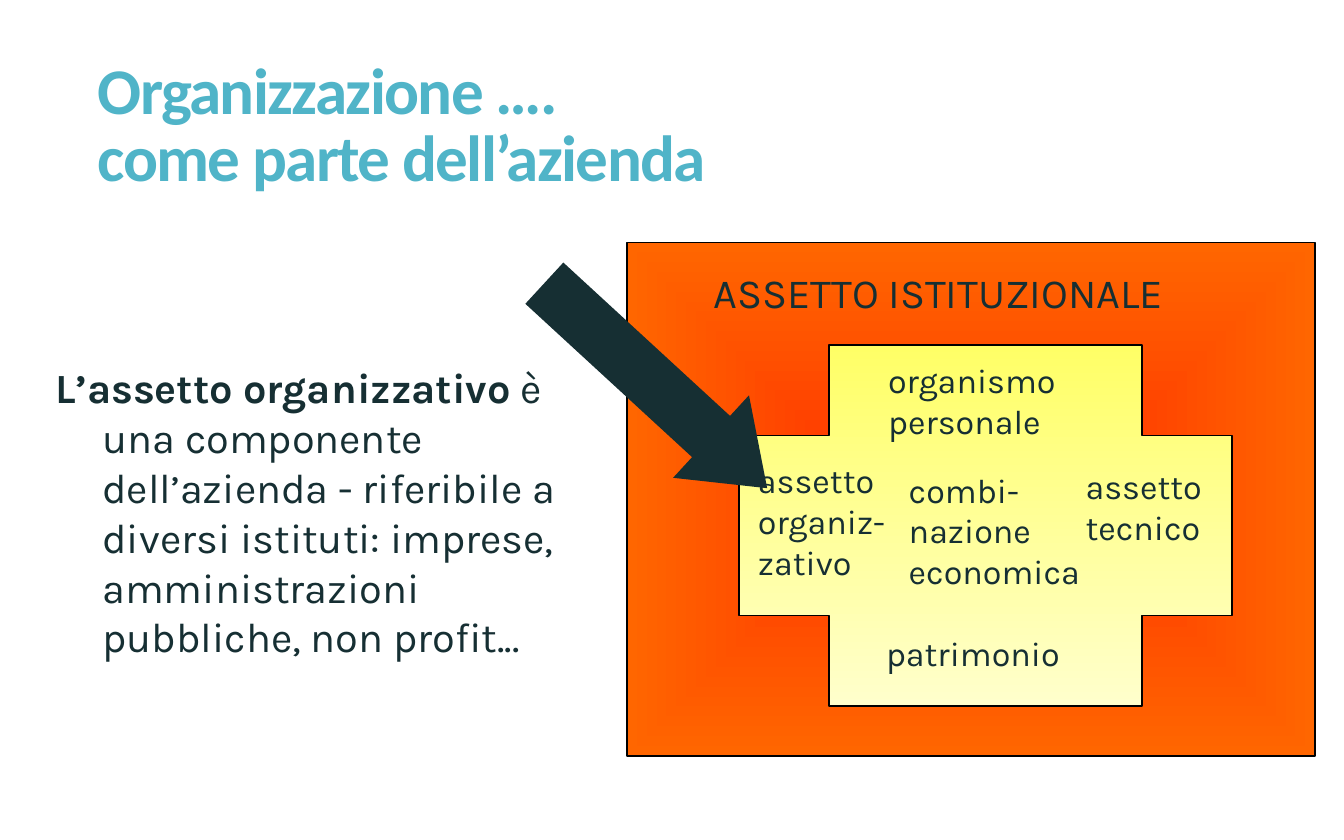
from lxml import etree
from pptx import Presentation
from pptx import util as u
from pptx.dml.color import RGBColor
from pptx.enum import shapes, text
from pptx.oxml import ns

TEAL = RGBColor(0x50, 0xB4, 0xC8)
INK = RGBColor(0x16, 0x2F, 0x33)
BLACK = RGBColor(0x00, 0x00, 0x00)
RED = RGBColor(0xFF, 0x33, 0x00)
ORANGE = RGBColor(0xFF, 0x66, 0x00)
YELLOW = RGBColor(0xFF, 0xFF, 0x66)
CREAM = RGBColor(0xFF, 0xFF, 0xCC)


class AssettoSlide:
    """Draws styled text and shapes on one slide, with lengths in centimetres."""

    body_font = "Karla"
    title_font = "Calibri"

    def __init__(self, presentation):
        self.slide = presentation.slides.add_slide(presentation.slide_layouts[6])

    def frame(self, box, wrap=True):
        frame = self.slide.shapes.add_textbox(*map(u.Cm, box)).text_frame
        frame.word_wrap = wrap
        frame.margin_left = frame.margin_right = u.Cm(0.3)
        frame.margin_top = frame.margin_bottom = u.Cm(0.15)
        return frame

    def run(self, paragraph, words, size, color=INK, font=body_font, bold=False):
        run = paragraph.add_run()
        run.text = words
        run.font.name = font
        run.font.size = u.Pt(size)
        run.font.bold = bold
        run.font.color.rgb = color
        return run

    def lines(self, frame, lines):
        for index, line in enumerate(lines):
            paragraph = frame.add_paragraph() if index else frame.paragraphs[0]
            yield paragraph, line

    def title(self, box, lines):
        frame = self.frame(box)
        frame.vertical_anchor = text.MSO_ANCHOR.MIDDLE
        for paragraph, line in self.lines(frame, lines):
            paragraph.line_spacing = 0.85
            run = self.run(paragraph, line, 44, TEAL, self.title_font, True)
            run.font._element.set("spc", "-110")

    def body(self, box, lead, rest):
        paragraph = self.frame(box).paragraphs[0]
        properties = paragraph._p.get_or_add_pPr()
        properties.set("marL", str(u.Cm(1.12)))
        properties.set("indent", str(u.Cm(-1.12)))
        self.run(paragraph, lead, 28, bold=True)
        self.run(paragraph, rest, 28)

    def label(self, box, lines, size=23, wrap=False):
        frame = self.frame(box, wrap)
        frame.auto_size = text.MSO_AUTO_SIZE.SHAPE_TO_FIT_TEXT
        for paragraph, line in self.lines(frame, lines):
            self.run(paragraph, line, size)

    def shape(self, kind, box, adjustments=()):
        shape = self.slide.shapes.add_shape(kind, *map(u.Cm, box))
        shape.shadow.inherit = False
        for index, value in enumerate(adjustments):
            shape.adjustments[index] = value
        return shape

    def gradient_shape(self, kind, box, colors, adjustments=(), from_center=False):
        shape = self.shape(kind, box, adjustments)
        shape.line.color.rgb = BLACK
        shape.line.width = u.Pt(1)
        shape.fill.gradient()
        shape.fill.gradient_angle = 270
        for stop, color in zip(shape.fill.gradient_stops, colors):
            stop.color.rgb = color
        if from_center:
            linear = shape._element.spPr.find(".//" + ns.qn("a:lin"))
            path = etree.Element(ns.qn("a:path"), path="shape")
            sides = dict.fromkeys("ltrb", "50000")
            etree.SubElement(path, ns.qn("a:fillToRect"), sides)
            linear.getparent().replace(linear, path)

    def arrow(self, box, rotation):
        arrow = self.shape(shapes.MSO_SHAPE.RIGHT_ARROW, box, (0.5, 0.68))
        arrow.rotation = rotation
        arrow.fill.solid()
        arrow.fill.fore_color.rgb = INK
        arrow.line.fill.background()


def main():
    presentation = Presentation()
    presentation.slide_width = u.Cm(12.6 * 2.54)
    presentation.slide_height = u.Emu(round(presentation.slide_width / 1.6))
    page = AssettoSlide(presentation)

    page.title((2.03, 1.4, 27.66, 3.3), ("Organizzazione ….", "come parte dell’azienda"))
    page.body(
        (1.02, 8.48, 13.34, 10.62),
        "L’assetto organizzativo",
        " è una componente dell’azienda - riferibile a diversi istituti: "
        "imprese, amministrazioni pubbliche, non profit...",
    )
    page.gradient_shape(
        shapes.MSO_SHAPE.RECTANGLE, (14.93, 5.77, 16.39, 12.23), (RED, ORANGE), from_center=True
    )
    page.gradient_shape(
        shapes.MSO_SHAPE.CROSS, (17.6, 8.22, 11.74, 8.59), (YELLOW, CREAM), (0.25,)
    )
    page.label((20.85, 8.41, 4.72, 2.06), ("organismo", "personale"))
    page.label((20.8, 14.91, 4.85, 1.14), ("patrimonio",))
    page.label((17.75, 10.79, 3.84, 2.92), ("assetto", "organiz-", "zativo"))
    page.label((25.55, 10.94, 3.45, 2.06), ("assetto", "tecnico"))
    page.label((21.34, 11.02, 5.23, 2.95), ("combi-", "nazione", "economica"), wrap=True)
    page.label((16.69, 6.22, 12.98, 1.35), ("ASSETTO ISTITUZIONALE",), size=28)
    page.arrow((12.01, 7.85, 7.21, 2.67), 42.6)

    presentation.save("out.pptx")


if __name__ == "__main__":
    main()
